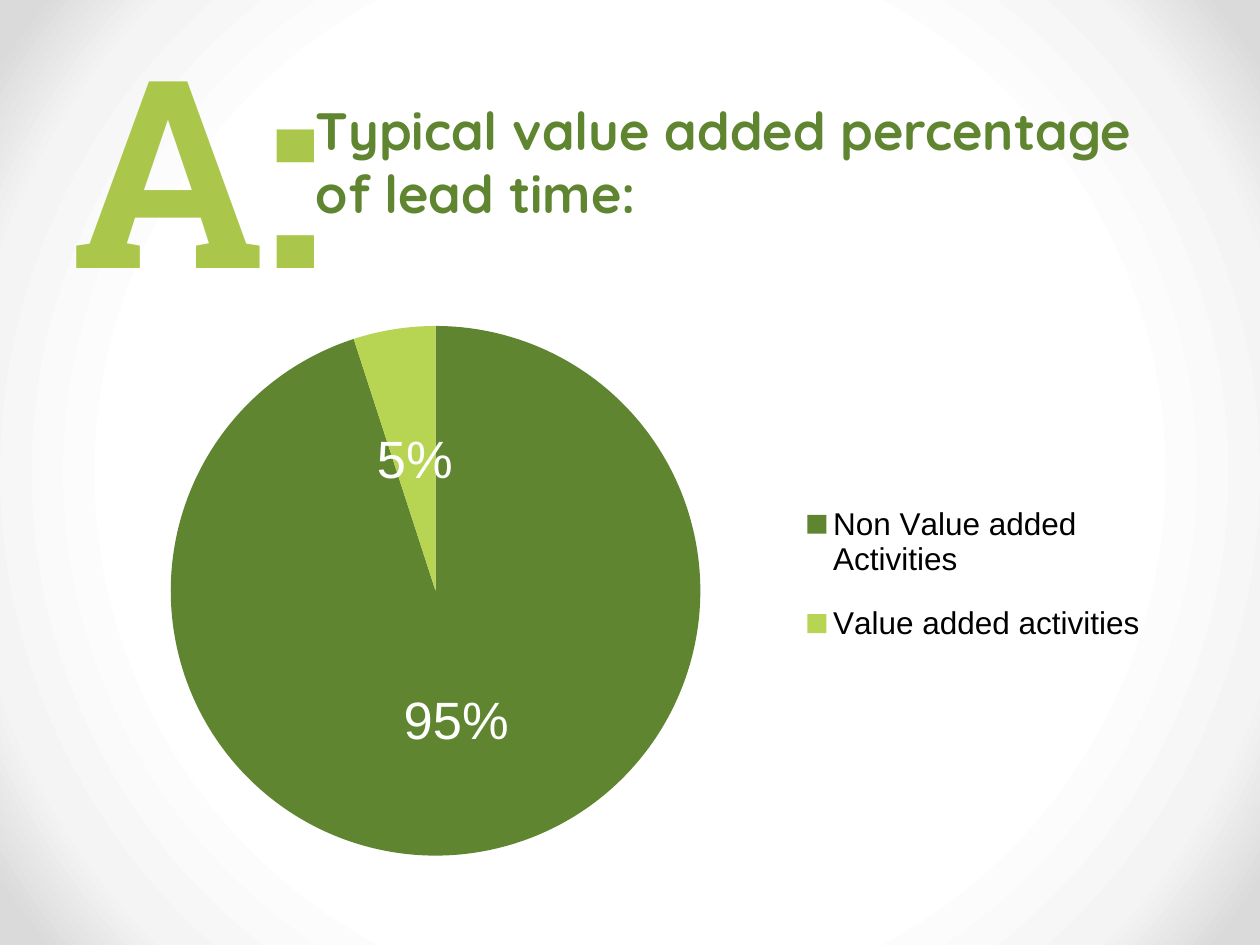
from dataclasses import dataclass

from lxml import etree
from pptx import Presentation
from pptx.chart.data import CategoryChartData
from pptx.dml.color import RGBColor
from pptx.enum import chart as charts, text
from pptx.oxml import parse_xml
from pptx.oxml.ns import nsdecls, qn
from pptx.util import Inches, Pt

FOREST = RGBColor(0x5F, 0x85, 0x31)
LIME = RGBColor(0xB7, 0xD4, 0x52)
LEAF = RGBColor(0xAA, 0xC6, 0x4B)
WHITE = RGBColor(0xFF, 0xFF, 0xFF)
BLACK = RGBColor(0, 0, 0)
VIGNETTE = ((64, WHITE), (84, RGBColor(0xF4, 0xF4, 0xF4)), (96, RGBColor(0xDA, 0xDA, 0xDA)))


@dataclass
class Deck:
    prs: object
    slide: object = None
    body_font: str = "Arial"

    def add_slide(self):
        self.slide = self.prs.slides.add_slide(self.prs.slide_layouts[6])

    def box(self, left, top, width, height):
        w, h = self.prs.slide_width, self.prs.slide_height
        return int(left * w), int(top * h), int(width * w), int(height * h)

    def background(self, stops):
        fill = self.slide.background.fill
        fill.gradient()
        grad = fill._fill._gradFill
        for child in list(grad):
            grad.remove(child)
        stop_list = etree.SubElement(grad, qn("a:gsLst"))
        for percent, color in stops:
            stop = etree.SubElement(stop_list, qn("a:gs"), pos=str(percent * 1000))
            etree.SubElement(stop, qn("a:srgbClr"), val=str(color))
        path = etree.SubElement(grad, qn("a:path"), path="circle")
        etree.SubElement(path, qn("a:fillToRect"), l="50000", t="50000", r="50000", b="50000")

    def style(self, font, size, color, name=None, bold=False):
        font.name, font.size, font.bold = name or self.body_font, Pt(size), bold
        font.color.rgb = color

    def text(self, place, words, size, color, name, anchor=text.MSO_ANCHOR.TOP):
        frame = self.slide.shapes.add_textbox(*self.box(*place)).text_frame
        frame.word_wrap = True
        frame.vertical_anchor = anchor
        frame.text = words
        self.style(frame.paragraphs[0].font, size, color, name, bold=True)

    def layout(self, x, y, w, h, inner=False):
        target = '<c:layoutTarget val="inner"/>' if inner else ""
        return parse_xml(
            f'<c:layout {nsdecls("c")}><c:manualLayout>{target}'
            '<c:xMode val="edge"/><c:yMode val="edge"/>'
            f'<c:x val="{x}"/><c:y val="{y}"/><c:w val="{w}"/><c:h val="{h}"/>'
            "</c:manualLayout></c:layout>"
        )

    def pie(self, place, series_name, shares, plot_place, legend_place):
        data = CategoryChartData()
        data.categories = [category for category, _, _ in shares]
        data.add_series(series_name, [value for _, value, _ in shares])
        frame = self.slide.shapes.add_chart(charts.XL_CHART_TYPE.PIE, *self.box(*place), data)
        chart = frame.chart
        chart.has_title = False
        self.style(chart.font, 18, BLACK)

        chart.has_legend = True
        legend = chart.legend
        legend.position = charts.XL_LEGEND_POSITION.RIGHT
        legend.include_in_layout = False
        self.style(legend.font, 18, BLACK)

        plot = chart.plots[0]
        plot.vary_by_categories = True
        for index, (_, _, color) in enumerate(shares):
            fill = plot.series[0].points[index].format.fill
            fill.solid()
            fill.fore_color.rgb = color

        labels = plot.series[0].data_labels
        labels.show_value = True
        labels.number_format = '0"%"'
        labels.number_format_is_linked = False
        labels.position = charts.XL_LABEL_POSITION.CENTER
        self.style(labels.font, 30, WHITE)

        plot_area = chart._chartSpace.chart.plotArea
        for part, spot in ((plot_area, self.layout(*plot_place, inner=True)),
                           (legend._element, self.layout(*legend_place))):
            for old in part.findall(qn("c:layout")):
                part.remove(old)
            part.insert(0 if part is plot_area else 1, spot)


def main():
    prs = Presentation()
    prs.slide_width, prs.slide_height = Inches(10), Inches(7.5)
    deck = Deck(prs)
    deck.add_slide()
    deck.background(VIGNETTE)
    deck.text((0.241, 0.5 / 7.5, 0.677, 1.33 / 7.5),
              "Typical value added percentage of lead time:",
              30, FOREST, "Quicksand", text.MSO_ANCHOR.BOTTOM)
    deck.pie((0.047, 2.45 / 7.5, 0.885, 4.48 / 7.5), "Series 1",
             (("Non Value added Activities", 95, FOREST),
              ("Value added activities", 5, LIME)),
             plot_place=(0.1, 0.03, 0.475, 0.94),
             legend_place=(0.66, 0.3, 0.32, 0.34))
    deck.text((0.047, 0, 0.229, 2.63 / 7.5), "A:", 150, LEAF, "Roboto Slab")
    prs.save("out.pptx")


if __name__ == "__main__":
    main()
